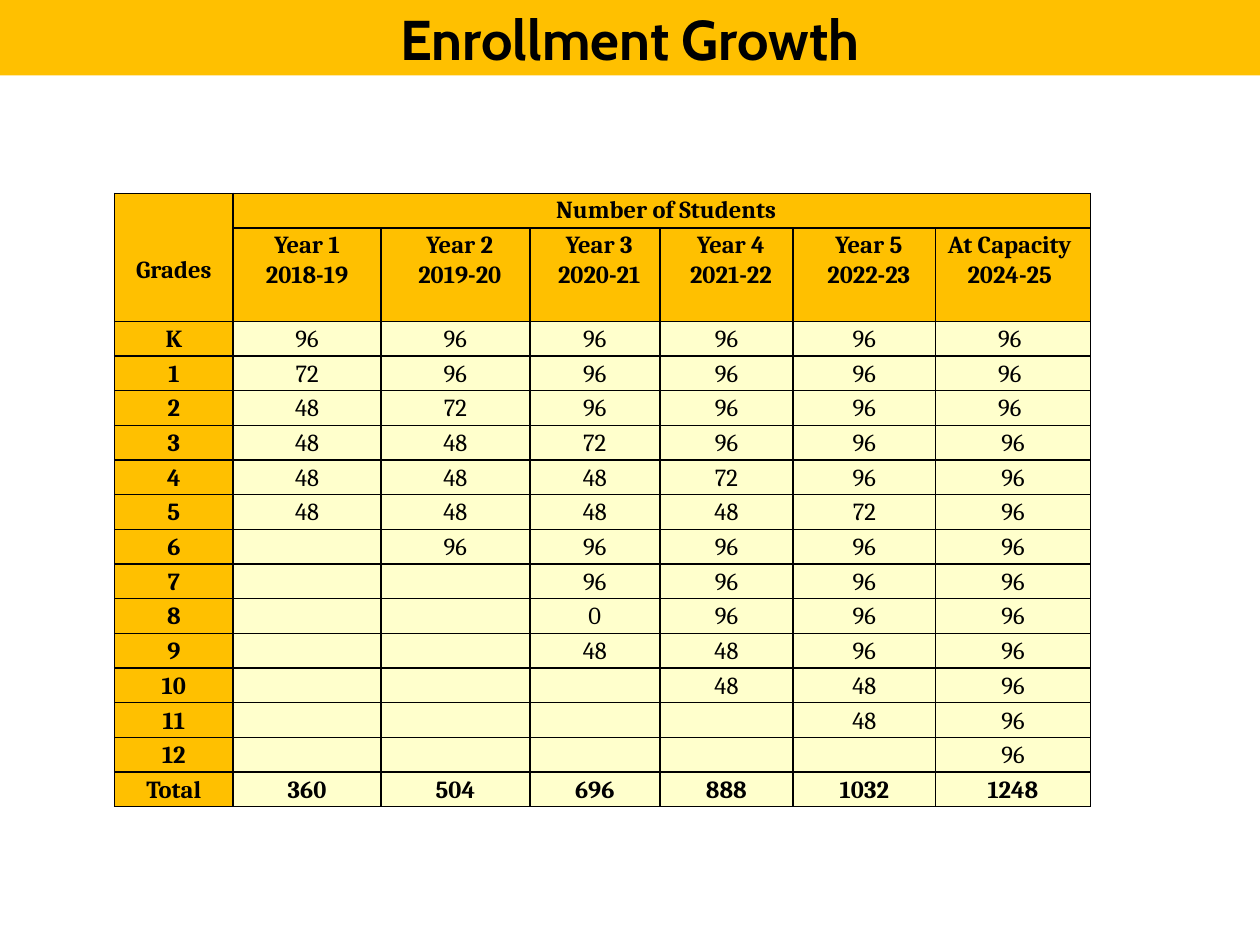
from lxml.etree import SubElement
from pptx import Presentation
from pptx.dml.color import RGBColor
from pptx.enum.shapes import MSO_SHAPE
from pptx.enum.text import MSO_ANCHOR, PP_ALIGN
from pptx.oxml.ns import qn
from pptx.util import Cm, Pt

COLORS = {"gold": "FFC000", "cream": "FFFFCC", "black": "000000"}
INDENT = Cm(0.18)

column_widths = [2.39, 2.98, 3.0, 2.62, 2.69, 2.87, 3.12]
year_heads = [
    "Year 1\n2018-19", "Year 2\n2019-20", "Year 3\n2020-21",
    "Year 4\n2021-22", "Year 5\n2022-23", "At Capacity\n2024-25",
]
enrollment = [
    ["K", 96, 96, 96, 96, 96, 96],
    ["1", 72, 96, 96, 96, 96, 96],
    ["2", 48, 72, 96, 96, 96, 96],
    ["3", 48, 48, 72, 96, 96, 96],
    ["4", 48, 48, 48, 72, 96, 96],
    ["5", 48, 48, 48, 48, 72, 96],
    ["6", "", 96, 96, 96, 96, 96],
    ["7", "", "", 96, 96, 96, 96],
    ["8", "", "", 0, 96, 96, 96],
    ["9", "", "", 48, 48, 96, 96],
    ["10", "", "", "", 48, 48, 96],
    ["11", "", "", "", "", 48, 96],
    ["12", "", "", "", "", "", 96],
    ["Total", 360, 504, 696, 888, 1032, 1248],
]
rows = [["Grades", "Number of Students"] + [""] * 5, [""] + year_heads] + enrollment
total_row = len(rows) - 1
last_column = len(column_widths) - 1


def style_text(paragraph, font_name, size, bold):
    paragraph.alignment = PP_ALIGN.CENTER
    paragraph.font.name = font_name
    paragraph.font.size = Pt(size)
    paragraph.font.bold = bold
    paragraph.font.color.rgb = RGBColor.from_string(COLORS["black"])


def add_borders(cell):
    """Draw a thin line on all four sides, placed before the cell's fill."""
    properties = cell._tc.get_or_add_tcPr()
    for position, side in enumerate(("a:lnL", "a:lnR", "a:lnT", "a:lnB")):
        line = SubElement(properties, qn(side), w=str(Pt(1)))
        line_fill = SubElement(line, qn("a:solidFill"))
        SubElement(line_fill, qn("a:srgbClr"), val=COLORS["black"])
        properties.insert(position, line)


presentation = Presentation()
presentation.slide_width = Cm(25.4)
presentation.slide_height = Cm(19.05)
slide = presentation.slides.add_slide(presentation.slide_layouts[6])

# Enrollment table
row_heights = [0.7, 1.87] + [0.7] * len(enrollment)
table = slide.shapes.add_table(
    len(rows), len(column_widths), Cm(2.31), Cm(3.9),
    Cm(sum(column_widths)), Cm(sum(row_heights)),
).table
for column, width in zip(table.columns, column_widths):
    column.width = Cm(width)
for row, height in zip(table.rows, row_heights):
    row.height = Cm(height)
table.cell(0, 0).merge(table.cell(1, 0))
table.cell(0, 1).merge(table.cell(0, last_column))

for r, values in enumerate(rows):
    for c, value in enumerate(values):
        cell = table.cell(r, c)
        is_head = r < 2 or c == 0
        cell.fill.solid()
        cell.fill.fore_color.rgb = RGBColor.from_string(COLORS["gold" if is_head else "cream"])
        add_borders(cell)
        cell.margin_left = cell.margin_right = cell.margin_top = cell.margin_bottom = Cm(0.03)
        cell.vertical_anchor = MSO_ANCHOR.TOP if r < 2 else MSO_ANCHOR.MIDDLE
        cell.text = str(value)
        for paragraph in cell.text_frame.paragraphs:
            style_text(paragraph, "Cambria", 14, is_head or r == total_row)
            paragraph.line_spacing = 1.07
            indents = paragraph._p.get_or_add_pPr()
            if (r < 2 and c < last_column) or (c == 1 and r < 5):
                indents.set("marL", str(INDENT))
                if c == 0 or (c == 1 and r > 0):
                    indents.set("marR", str(INDENT))
            elif c == last_column and r < 5:
                indents.set("marR", str(Cm(0.13)))
            if value == "":
                SubElement(paragraph._p, qn("a:endParaRPr"), sz="1400")

# "Grades" sits on the third line of its merged cell
table.cell(0, 0).margin_top = Cm(1.24)

# Title band
title_band = slide.shapes.add_shape(MSO_SHAPE.RECTANGLE, 0, 0, Cm(25.4), Cm(1.52))
title_band.shadow.inherit = False
title_band.fill.solid()
title_band.fill.fore_color.rgb = RGBColor.from_string(COLORS["gold"])
title_band.line.fill.background()
title_band.text_frame.text = "Enrollment Growth"
title_band.text_frame.vertical_anchor = MSO_ANCHOR.MIDDLE
style_text(title_band.text_frame.paragraphs[0], "Cabin", 32, True)

presentation.save("out.pptx")
